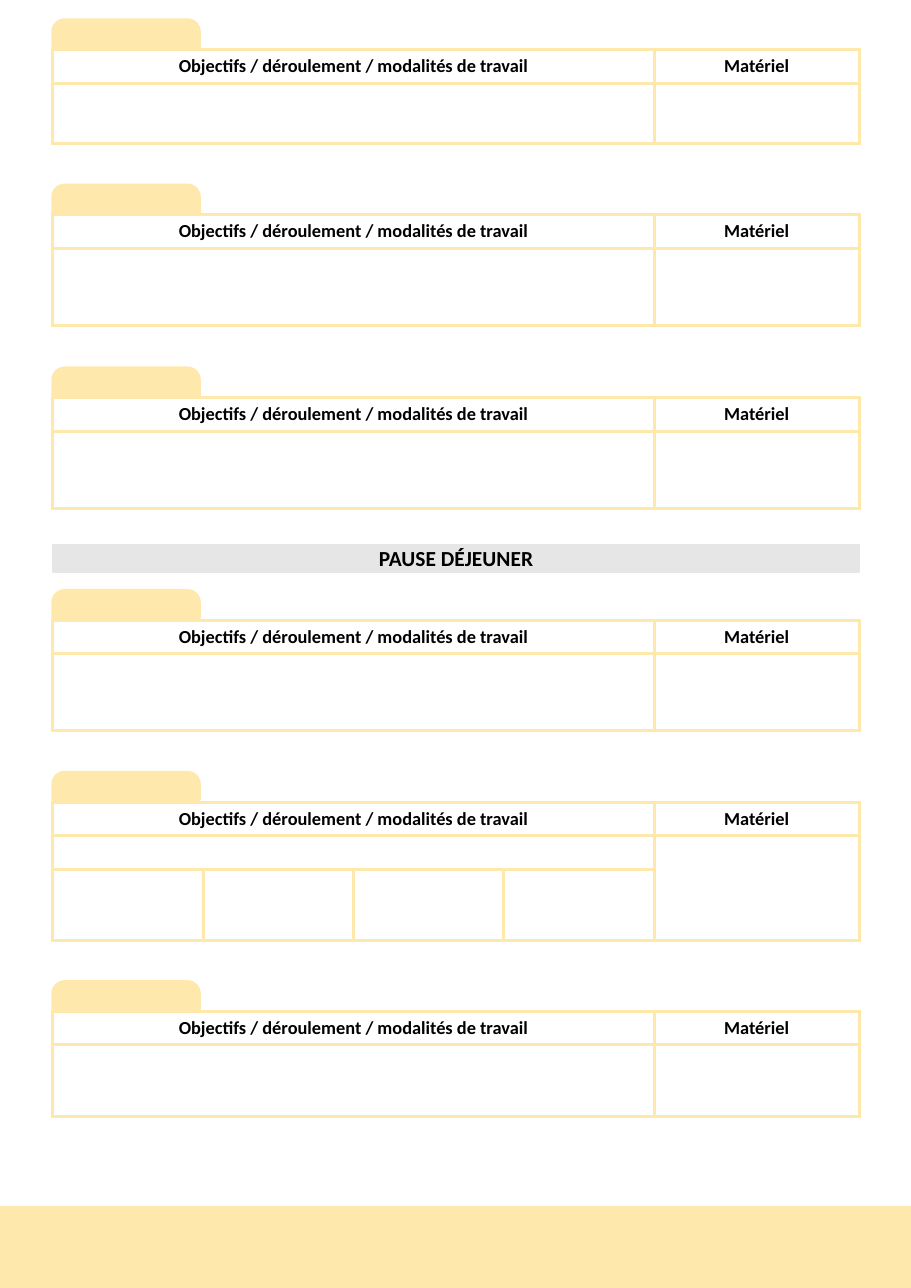
"""Build a portrait day planner with tabbed lesson tables and a lunch break."""
from dataclasses import dataclass

import lxml.etree
import pptx
import pptx.dml.color
import pptx.enum.shapes
import pptx.enum.text
import pptx.oxml.ns
import pptx.util

Inches = pptx.util.Inches
Pt = pptx.util.Pt
RGBColor = pptx.dml.color.RGBColor
Kind = pptx.enum.shapes.MSO_SHAPE
qn = pptx.oxml.ns.qn

CREAM = RGBColor(0xFF, 0xE8, 0xAC)
GREY = RGBColor(0xE7, 0xE6, 0xE6)
WHITE = RGBColor(0xFF, 0xFF, 0xFF)
BLACK = RGBColor(0, 0, 0)

PAGE_W, PAGE_H = 8.27, 11.69
LEFT = 0.48
GOAL_W, GEAR_W = 5.46, 1.86
WIDTH = GOAL_W + GEAR_W
HEAD_H = 0.3
TAB_W, TAB_H, TAB_RISE = 1.33, 0.25, 0.27


@dataclass(frozen=True)
class Lesson:
    top: float
    rows: tuple[float, ...]
    groups: int = 1


LESSONS = (
    Lesson(0.45, (0.55,)),
    Lesson(1.95, (0.7,)),
    Lesson(3.61, (0.7,)),
    Lesson(5.63, (0.7,)),
    Lesson(7.28, (0.31, 0.64), groups=4),
    Lesson(9.18, (0.65,)),
)


def style(frame, size: int, text: str = "") -> None:
    para = frame.paragraphs[0]
    para.text = text
    para.alignment = pptx.enum.text.PP_ALIGN.CENTER
    para.font.name = "Calibri"
    para.font.size = Pt(size)
    para.font.bold = True
    para.font.color.rgb = BLACK


def add_block(slide, kind, left: float, top: float, width: float,
              height: float, color: RGBColor, line: float = 1):
    block = slide.shapes.add_shape(
        kind, Inches(left), Inches(top), Inches(width), Inches(height))
    block.shadow.inherit = False
    block.fill.solid()
    block.fill.fore_color.rgb = color
    block.line.color.rgb = color
    block.line.width = Pt(line)
    return block


def format_cell(cell) -> None:
    props = cell._tc.get_or_add_tcPr()
    for side in ("lnL", "lnR", "lnT", "lnB"):
        edge = lxml.etree.SubElement(props, qn(f"a:{side}"), w=str(Pt(2.25)))
        fill = lxml.etree.SubElement(edge, qn("a:solidFill"))
        lxml.etree.SubElement(fill, qn("a:srgbClr"), val=str(CREAM))
    cell.fill.solid()
    cell.fill.fore_color.rgb = WHITE
    cell.vertical_anchor = pptx.enum.text.MSO_ANCHOR.MIDDLE
    style(cell.text_frame, 12)


def add_lesson(slide, item: Lesson) -> None:
    heights = (HEAD_H, *item.rows)
    widths = [GOAL_W / item.groups] * item.groups + [GEAR_W]
    table = slide.shapes.add_table(
        len(heights), len(widths), Inches(LEFT), Inches(item.top),
        Inches(WIDTH), Inches(sum(heights))).table
    table.horz_banding = False
    for row, height in zip(table.rows, heights):
        row.height = Inches(height)
    for column, width in zip(table.columns, widths):
        column.width = Inches(width)
    for cell in table.iter_cells():
        format_cell(cell)
    if item.groups > 1:
        for row in (0, 1):
            table.cell(row, 0).merge(table.cell(row, item.groups - 1))
        table.cell(1, item.groups).merge(
            table.cell(len(item.rows), item.groups))
    style(table.cell(0, 0).text_frame, 12,
          "Objectifs / déroulement / modalités de travail")
    style(table.cell(0, item.groups).text_frame, 12, "Matériel")

    tab = add_block(slide, Kind.ROUND_2_SAME_RECTANGLE, LEFT,
                    item.top - TAB_RISE, TAB_W, TAB_H, CREAM, 2)
    tab.adjustments[0] = 0.43


def add_pause(slide) -> None:
    band = add_block(slide, Kind.RECTANGLE, LEFT, 4.94, WIDTH, 0.25, GREY)
    frame = band.text_frame
    frame.margin_top = frame.margin_bottom = 0
    frame.vertical_anchor = pptx.enum.text.MSO_ANCHOR.MIDDLE
    style(frame, 14, "PAUSE DÉJEUNER")


def main() -> None:
    deck = pptx.Presentation()
    deck.slide_width = Inches(PAGE_W)
    deck.slide_height = Inches(PAGE_H)
    slide = deck.slides.add_slide(deck.slide_layouts[6])
    add_block(slide, Kind.RECTANGLE, 0, 10.95, PAGE_W, 0.74, CREAM)
    for item in LESSONS:
        add_lesson(slide, item)
    add_pause(slide)
    deck.save("out.pptx")


if __name__ == "__main__":
    main()
